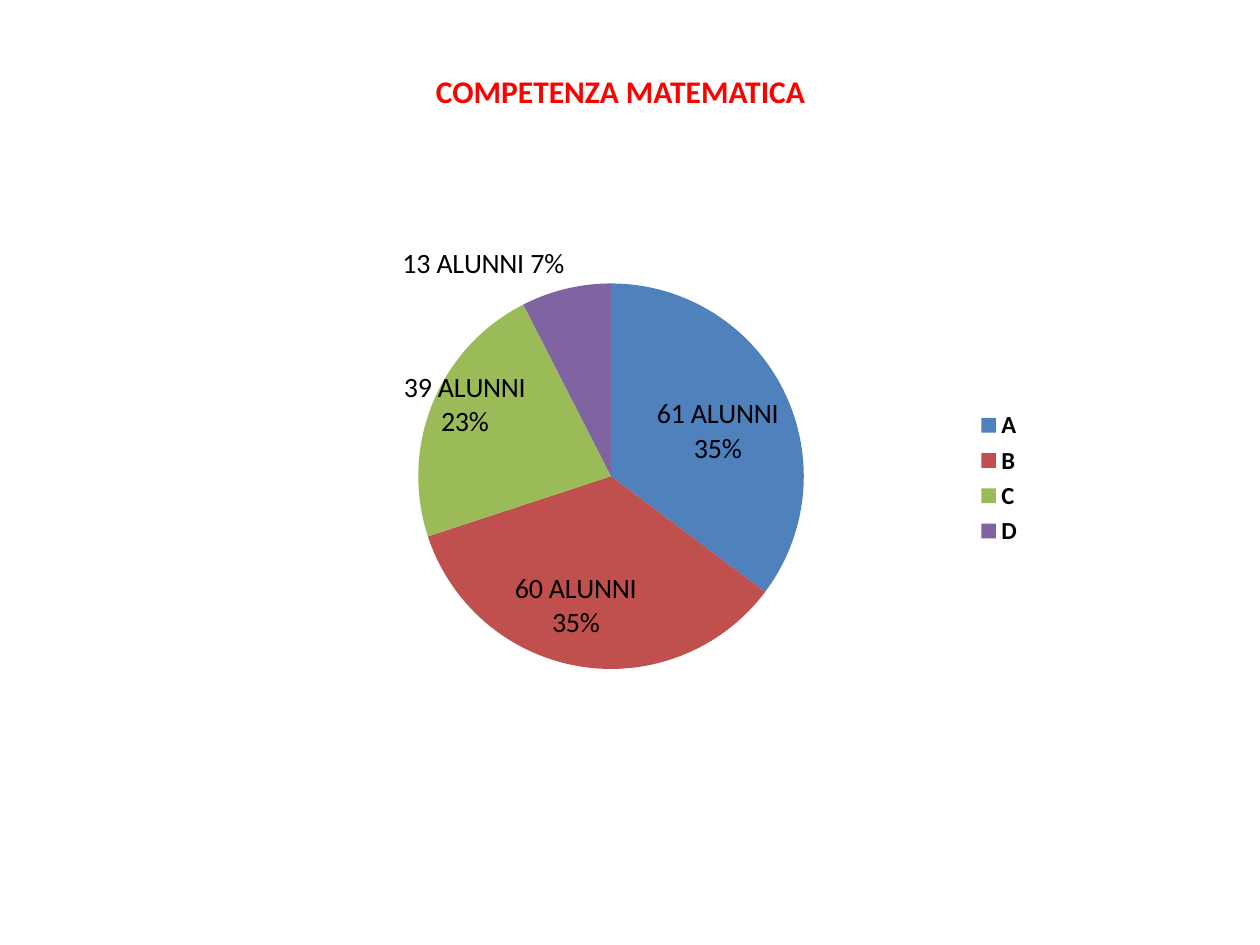
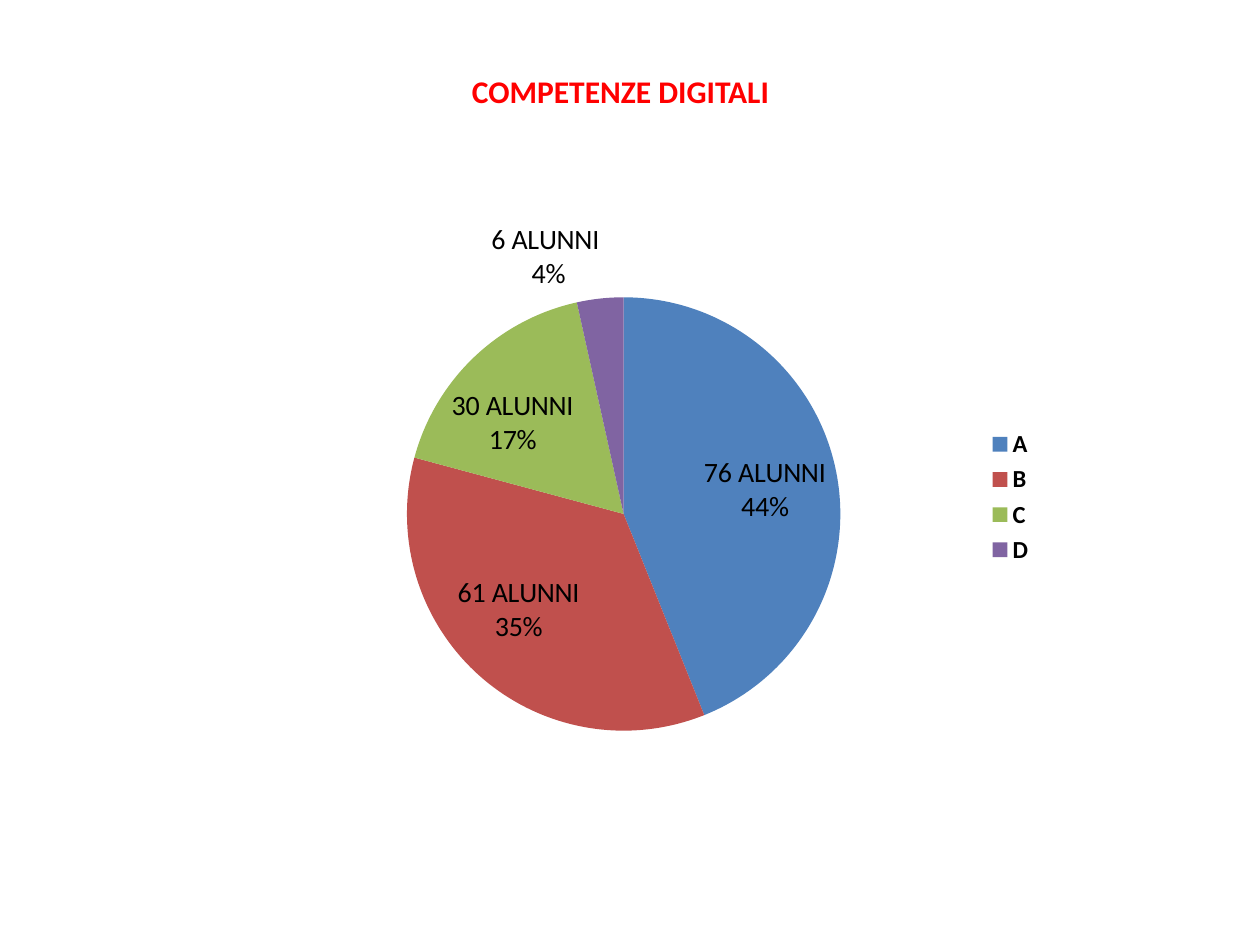
from dataclasses import dataclass

from lxml import etree
from pptx import Presentation
from pptx.chart.chart import Chart
from pptx.chart.data import CategoryChartData
from pptx.chart.point import Point
from pptx.dml.color import RGBColor
from pptx.enum.chart import XL_CHART_TYPE, XL_LABEL_POSITION, XL_LEGEND_POSITION
from pptx.enum.text import MSO_ANCHOR, PP_ALIGN
from pptx.oxml.ns import qn
from pptx.slide import Slide
from pptx.util import Inches, Pt

PIE = XL_CHART_TYPE.PIE
LEGEND_RIGHT = XL_LEGEND_POSITION.RIGHT
OUTSIDE = XL_LABEL_POSITION.OUTSIDE_END
ALIGN_CENTER = PP_ALIGN.CENTER
ANCHOR_MIDDLE = MSO_ANCHOR.MIDDLE

FONT = "Calibri"
TITLE_RED = RGBColor(0xFF, 0x00, 0x00)
BLACK = RGBColor(0x00, 0x00, 0x00)
LEVEL_COLOURS = {
    "A": RGBColor(0x4F, 0x81, 0xBD),
    "B": RGBColor(0xC0, 0x50, 0x4D),
    "C": RGBColor(0x9B, 0xBB, 0x59),
    "D": RGBColor(0x80, 0x64, 0xA2),
}
TITLE_ONLY = 5


@dataclass(frozen=True)
class Level:
    """The shift moves the label from outside its slice, as shares of the frame."""
    pupils: int
    label: str
    shift: tuple[float, float] | None = None


@dataclass(frozen=True)
class Competence:
    """One slide; lengths are in inches, the pie centre is on the slide."""
    title: str
    frame: tuple[float, float, float, float]
    pie_centre: tuple[float, float]
    pie_radius: float
    levels: tuple[Level, ...]


COMPETENCES = (
    Competence("COMPETENZA MATEMATICA", (1.61, 1.55, 6.61, 4.49), (4.85, 3.78), 1.53, (
        Level(61, "61 ALUNNI 35%", (-0.16, 0.14)),
        Level(60, "60 ALUNNI 35%", (0.07, -0.18)),
        Level(39, "39 ALUNNI 23%", (0.12, 0.07)),
        Level(13, "13 ALUNNI 7%"),
    )),
    Competence("COMPETENZE DIGITALI", (1.38, 1.62, 6.93, 4.65), (4.95, 4.08), 1.72, (
        Level(76, "76 ALUNNI 44%", (-0.16, 0.09)),
        Level(61, "61 ALUNNI 35%", (0.12, -0.18)),
        Level(30, "30 ALUNNI 17%", (0.12, 0.18)),
        Level(6, "6 ALUNNI\n 4%"),
    )),
)


def set_title(slide: Slide, text: str) -> None:
    title = slide.shapes.title
    title.left, title.top = Inches(2.17), Inches(0.52)
    title.width, title.height = Inches(5.51), Inches(0.4)
    frame = title.text_frame
    frame.text = text
    frame.word_wrap = True
    frame.vertical_anchor = ANCHOR_MIDDLE
    paragraph = frame.paragraphs[0]
    paragraph.alignment = ALIGN_CENTER
    font = paragraph.runs[0].font
    font.name, font.size, font.bold = FONT, Pt(18), True
    font.color.rgb = TITLE_RED


def manual_layout(parent: etree.ElementBase, index: int, **settings: str | float) -> None:
    """Replace the layout of a chart part by a fixed one."""
    for automatic in parent.findall(qn("c:layout")):
        parent.remove(automatic)
    layout = etree.Element(qn("c:layout"))
    manual = etree.SubElement(layout, qn("c:manualLayout"))
    for tag, value in settings.items():
        etree.SubElement(manual, qn(f"c:{tag}")).set("val", str(value))
    parent.insert(index, layout)


def place_pie(chart: Chart, competence: Competence) -> None:
    """Fix the plot area to the square around the pie."""
    left, top, width, height = competence.frame
    centre_x, centre_y = competence.pie_centre
    radius = competence.pie_radius
    plot_area = chart._chartSpace.find(".//" + qn("c:plotArea"))
    manual_layout(plot_area, 0, layoutTarget="inner", xMode="edge", yMode="edge",
                  x=(centre_x - radius - left) / width,
                  y=(centre_y - radius - top) / height,
                  w=2 * radius / width, h=2 * radius / height)


def style_slice(pie_slice: Point, level: Level, colour: RGBColor) -> None:
    pie_slice.format.fill.solid()
    pie_slice.format.fill.fore_color.rgb = colour
    label = pie_slice.data_label
    label.text_frame.text = level.label
    label.text_frame.word_wrap = True
    label.position = OUTSIDE
    for paragraph in label.text_frame.paragraphs:
        font = paragraph.runs[0].font
        font.name, font.size, font.bold = FONT, Pt(16), False
        font.color.rgb = BLACK
    label_xml = label._dLbl
    label_xml.find(qn("c:showPercent")).set("val", "1")
    if level.shift:
        shift_x, shift_y = level.shift
        manual_layout(label_xml, 1, x=shift_x, y=shift_y)


def add_pie(slide: Slide, competence: Competence) -> None:
    data = CategoryChartData()
    data.categories = list(LEVEL_COLOURS)
    data.add_series("Series 1", [level.pupils for level in competence.levels])
    frame = [Inches(length) for length in competence.frame]
    chart = slide.shapes.add_chart(PIE, *frame, data).chart
    chart.has_title = False
    chart.font.name, chart.font.size = FONT, Pt(10)
    chart.font.color.rgb = BLACK
    place_pie(chart, competence)

    # Legend
    chart.has_legend = True
    chart.legend.position = LEGEND_RIGHT
    chart.legend.include_in_layout = False
    legend_font = chart.legend.font
    legend_font.name, legend_font.size, legend_font.bold = FONT, Pt(14), True
    legend_font.color.rgb = BLACK

    # Slices and their labels
    plot = chart.plots[0]
    plot.vary_by_categories = True
    series = plot.series[0]
    labels = series.data_labels
    labels.show_value = labels.show_percentage = True
    labels.font.name, labels.font.size, labels.font.bold = FONT, Pt(16), True
    for leader_lines in labels._element.findall(qn("c:showLeaderLines")):
        leader_lines.set("val", "0")
    for index, (level, colour) in enumerate(zip(competence.levels, LEVEL_COLOURS.values())):
        style_slice(series.points[index], level, colour)


def main() -> None:
    presentation = Presentation()
    presentation.slide_width, presentation.slide_height = Inches(10), Inches(7.5)
    for competence in COMPETENCES:
        slide = presentation.slides.add_slide(presentation.slide_layouts[TITLE_ONLY])
        set_title(slide, competence.title)
        add_pie(slide, competence)
    presentation.save("out.pptx")


if __name__ == "__main__":
    main()
